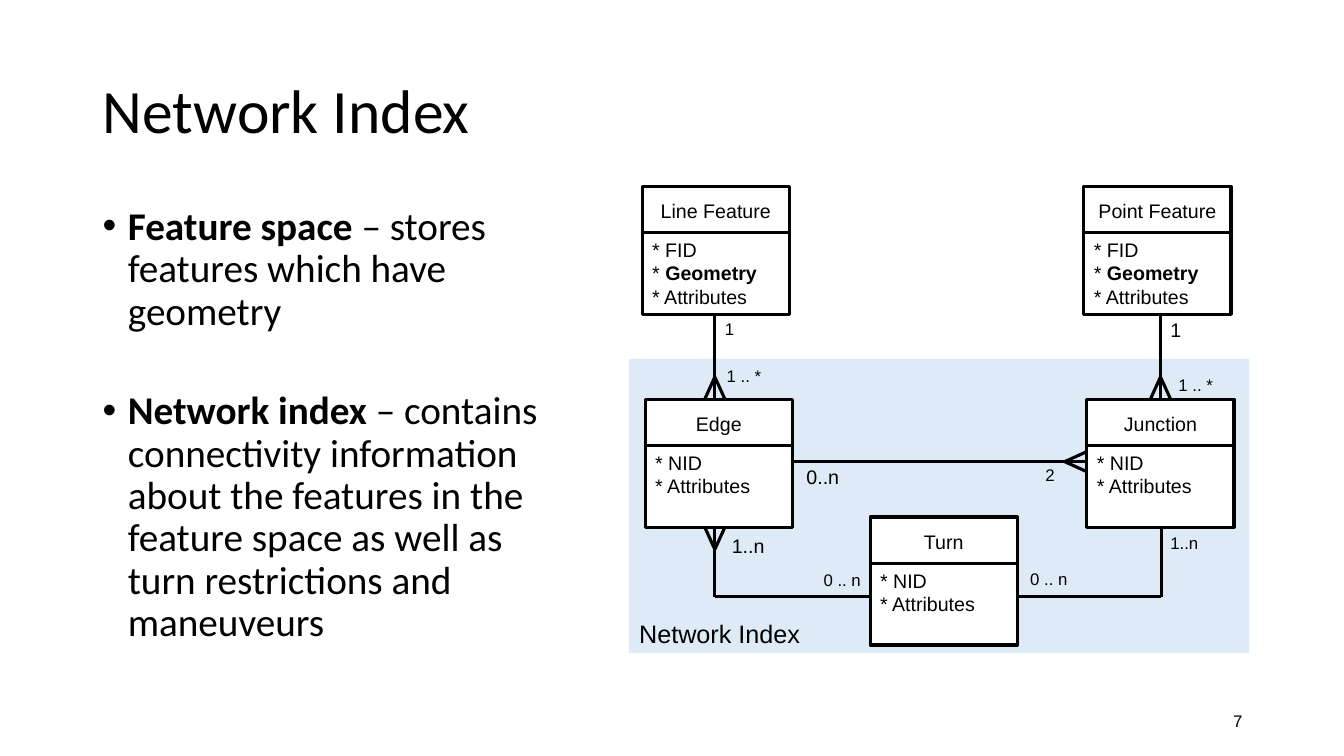
import pptx
import pptx.dml.color
import pptx.enum.shapes
import pptx.enum.text
import pptx.oxml.ns
import pptx.util
from lxml import etree

BLACK = pptx.dml.color.RGBColor(0x00, 0x00, 0x00)
WHITE = pptx.dml.color.RGBColor(0xFF, 0xFF, 0xFF)
PALE_BLUE = pptx.dml.color.RGBColor(0xDE, 0xEB, 0xF7)

ALIGN = pptx.enum.text.PP_ALIGN
ANCHOR = pptx.enum.text.MSO_ANCHOR

ENTITY_WIDTH, ENTITY_HEIGHT, HEADER_HEIGHT = 146, 127, 46
FOOT_LENGTH, FOOT_SPREAD = 22, 10


def px(length):
    """Turn px (100 to the inch) into EMU."""
    return pptx.util.Emu(length * 9144)


def add_xml(parent, tag, **attributes):
    return etree.SubElement(parent, pptx.oxml.ns.qn(tag), **attributes)


class DiagramPage:
    """A slide with the styles of its title, bullets and entity diagram."""

    def __init__(self, page):
        self.page = page
        self.heading_font = "Calibri"
        self.diagram_font = "Arial"
        self.line_width = pptx.util.Pt(2.25)

    def style(self, para, size, font, align=ALIGN.LEFT):
        para.alignment = align
        para.font.name = font
        para.font.size = pptx.util.Pt(size)
        para.font.color.rgb = BLACK

    def add_spans(self, para, text):
        """Fill a paragraph; text between ** marks is bold."""
        for index, part in enumerate(text.split("**")):
            if part:
                span = para.add_run()
                span.text = part
                if index % 2:
                    span.font.bold = True

    def title(self, text, left, top, width, height):
        box = self.page.shapes.title
        box.left, box.top, box.width, box.height = map(px, (left, top, width, height))
        frame = box.text_frame
        frame.text = text
        frame.auto_size = pptx.enum.text.MSO_AUTO_SIZE.NONE
        frame.vertical_anchor = ANCHOR.MIDDLE
        frame.paragraphs[0].line_spacing = 0.9
        self.style(frame.paragraphs[0], 44, self.heading_font)

    def text(self, lines, left, top, width, height, size=14, font=None,
             align=ALIGN.LEFT, anchor=ANCHOR.TOP):
        box = self.page.shapes.add_textbox(*map(px, (left, top, width, height)))
        frame = box.text_frame
        frame.word_wrap = True
        frame.vertical_anchor = anchor
        for index, line in enumerate(lines):
            para = frame.add_paragraph() if index else frame.paragraphs[0]
            self.add_spans(para, line)
            self.style(para, size, font or self.diagram_font, align)
        return frame

    def bullets(self, items, left, top, width, height, gap):
        frame = self.text(items, left, top, width, height, 28, self.heading_font)
        for index, para in enumerate(frame.paragraphs):
            para.line_spacing = 0.9
            para.space_before = pptx.util.Pt(gap if index else 10)
            properties = para._p.get_or_add_pPr()
            properties.set("marL", str(px(25)))
            properties.set("indent", str(px(-25)))
            bullet_font = add_xml(properties, "a:buFont", typeface="Arial")
            bullet = add_xml(properties, "a:buChar", char="•")
            default_font = properties.find(pptx.oxml.ns.qn("a:defRPr"))
            default_font.addprevious(bullet_font)
            default_font.addprevious(bullet)

    def rectangle(self, left, top, width, height, fill, outlined=True):
        shape = self.page.shapes.add_shape(
            pptx.enum.shapes.MSO_SHAPE.RECTANGLE, *map(px, (left, top, width, height)))
        shape.shadow.inherit = False
        shape.fill.solid()
        shape.fill.fore_color.rgb = fill
        if outlined:
            shape.line.color.rgb = BLACK
            shape.line.width = self.line_width
        else:
            shape.line.fill.background()
        return shape

    def area(self, name, left, top, width, height):
        """A tinted region named in its lower left corner."""
        frame = self.rectangle(left, top, width, height, PALE_BLUE, False).text_frame
        frame.text = name
        frame.vertical_anchor = ANCHOR.BOTTOM
        self.style(frame.paragraphs[0], 18, self.diagram_font)

    def line(self, x1, y1, x2, y2):
        connector = self.page.shapes.add_connector(
            pptx.enum.shapes.MSO_CONNECTOR.STRAIGHT, *map(px, (x1, y1, x2, y2)))
        connector.line.color.rgb = BLACK
        connector.line.width = self.line_width
        add_xml(connector._element.spPr, "a:effectLst")

    def crow_foot(self, x, y, dx, dy):
        """A "many" mark touching an entity at (x, y) and pointing along (dx, dy)."""
        for side in (-FOOT_SPREAD, FOOT_SPREAD):
            self.line(x + dx * FOOT_LENGTH, y + dy * FOOT_LENGTH,
                      x + dy * side, y + dx * side)

    def entity(self, name, attributes, left, top):
        self.rectangle(left, top, ENTITY_WIDTH, ENTITY_HEIGHT, WHITE)
        divider = top + HEADER_HEIGHT
        self.text([name], left, top + 2, ENTITY_WIDTH, HEADER_HEIGHT - 2,
                  align=ALIGN.CENTER, anchor=ANCHOR.MIDDLE)
        self.line(left, divider, left + ENTITY_WIDTH, divider)
        self.text([f"* {attribute}" for attribute in attributes],
                  left, divider, ENTITY_WIDTH, ENTITY_HEIGHT - HEADER_HEIGHT)


FEATURE_FIELDS = ["FID", "**Geometry**", "Attributes"]
INDEX_FIELDS = ["NID", "Attributes"]
ENTITIES = [
    ("Line Feature", FEATURE_FIELDS, 637, 185),
    ("Point Feature", FEATURE_FIELDS, 1075, 185),
    ("Edge", INDEX_FIELDS, 640, 396),
    ("Junction", INDEX_FIELDS, 1078, 396),
    ("Turn", INDEX_FIELDS, 863, 513),
]
RELATIONS = [
    (709, 312, 709, 396),    # Line Feature to Edge
    (1151, 312, 1151, 396),  # Point Feature to Junction
    (786, 458, 1078, 458),   # Edge to Junction
    (709, 523, 709, 592),    # Edge to Turn
    (709, 592, 863, 592),
    (1152, 523, 1152, 592),  # Junction to Turn
    (1009, 592, 1152, 592),
]
CROW_FEET = [(709, 396, 0, -1), (1151, 396, 0, -1), (1078, 458, -1, 0), (709, 523, 0, 1)]
CARDINALITIES = [
    ("1", 709, 311, 12),
    ("1", 1151, 310, 14),
    ("1 .. *", 711, 358, 12),
    ("1 .. *", 1159, 367, 12),
    ("0..n", 790, 456, 14),
    ("2", 1027, 456, 12),
    ("1..n", 716, 525, 14),
    ("1..n", 1151, 524, 12),
    ("0 .. n", 807, 560, 12),
    ("0 .. n", 1012, 559, 12),
]


def main():
    deck = pptx.Presentation()
    deck.slide_width, deck.slide_height = px(1333), px(750)
    title_only = deck.slide_layouts.get_by_name("Title Only")
    diagram = DiagramPage(deck.slides.add_slide(title_only))

    diagram.title("Network Index", 92, 40, 1150, 145)
    diagram.bullets([
        "**Feature space **– stores features which have geometry",
        "**Network index **– contains connectivity information about the features "
        "in the feature space as well as turn restrictions and maneuveurs",
    ], 92, 200, 481, 476, gap=41)
    diagram.text(["7"], 942, 695, 300, 40, 12, align=ALIGN.RIGHT, anchor=ANCHOR.MIDDLE)

    diagram.area("Network Index", 624, 356, 615, 292)
    for entity in ENTITIES:
        diagram.entity(*entity)
    for relation in RELATIONS:
        diagram.line(*relation)
    for foot in CROW_FEET:
        diagram.crow_foot(*foot)
    for label, left, top, size in CARDINALITIES:
        diagram.text([label], left, top, 80, 45, size)

    deck.save("out.pptx")


if __name__ == "__main__":
    main()
